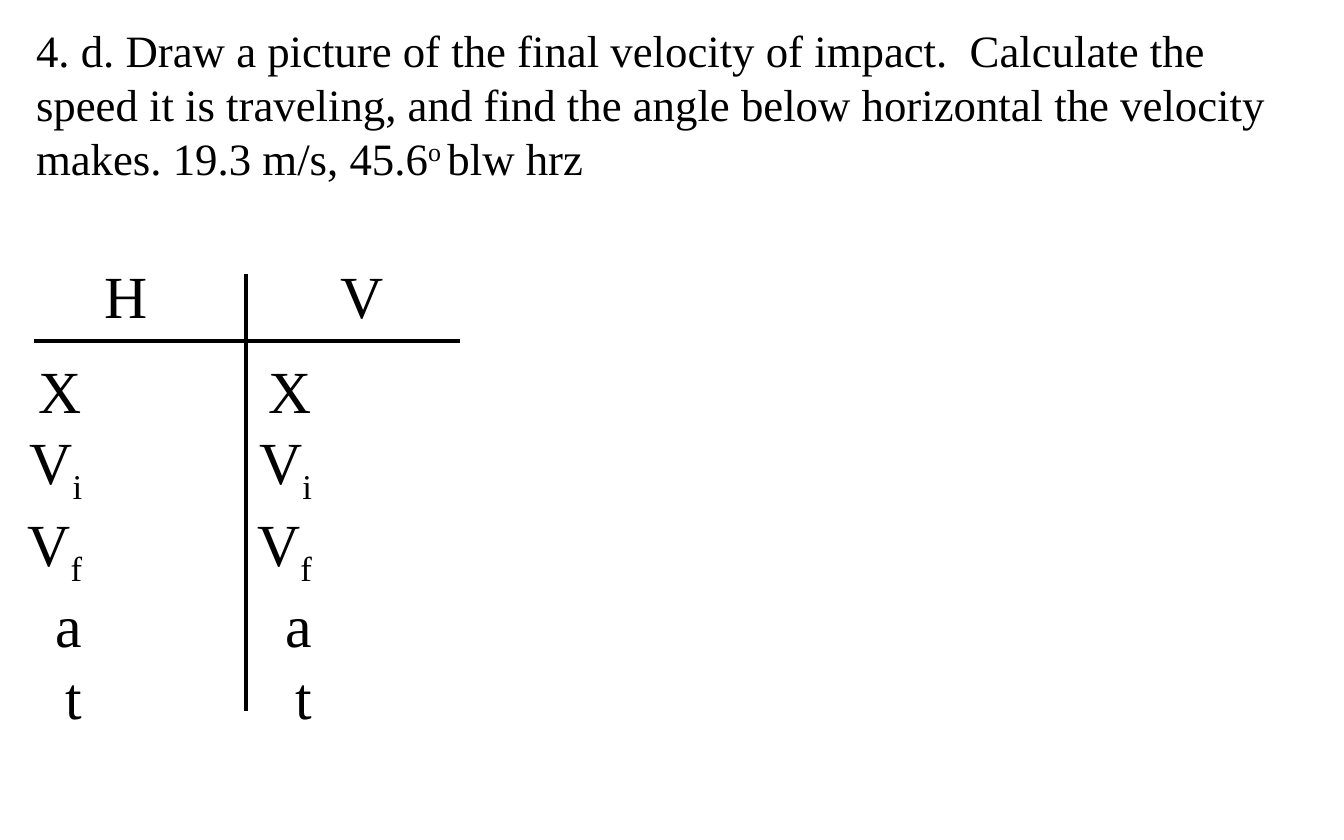
from lxml.etree import SubElement
from pptx import Presentation
from pptx.dml.color import RGBColor
from pptx.enum.shapes import MSO_CONNECTOR
from pptx.enum.text import MSO_AUTO_SIZE, PP_ALIGN
from pptx.oxml.ns import qn
from pptx.util import Inches, Pt

BLACK = RGBColor(0, 0, 0)
FONT = "Times New Roman"
SUPERSCRIPT, SUBSCRIPT = 30, -25

QUESTION = [[
    ("4. d. Draw a picture of the final velocity of impact.  Calculate the "
     "speed it is traveling, and find the angle below horizontal the "
     "velocity makes. 19.3 m/s, 45.6", 0),
    ("o ", SUPERSCRIPT),
    ("blw hrz", 0),
]]
QUANTITIES = [
    [("X", 0)],
    [("V", 0), ("i", SUBSCRIPT)],
    [("V", 0), ("f", SUBSCRIPT)],
    [("a", 0)],
    [("t", 0)],
]

CHART_LEFT, CHART_TOP = 0.25, 2.04
CHART_RIGHT, CHART_BOTTOM = 3.42, 5.29
DIVIDER_X, HEADER_Y = 1.83, 2.54
COLUMN_LEFTS = {"H": 0.08, "V": 1.79}
HEADING_LEFTS = {"H": 0.67, "V": 2.42}


def add_text(slide, box, paragraphs, size, align=PP_ALIGN.LEFT, wrap=False):
    """Write paragraphs, each a list of (text, baseline shift in percent)."""
    frame = slide.shapes.add_textbox(*map(Inches, box)).text_frame
    frame.word_wrap = wrap
    frame.auto_size = MSO_AUTO_SIZE.SHAPE_TO_FIT_TEXT
    for index, pieces in enumerate(paragraphs):
        paragraph = frame.add_paragraph() if index else frame.paragraphs[0]
        paragraph.alignment = align
        for text, baseline in pieces:
            run = paragraph.add_run()
            run.text = text
            run.font.name = FONT
            run.font.size = Pt(size)
            run.font.color.rgb = BLACK
            if baseline:
                run.font._element.set("baseline", str(baseline * 1000))


def add_rule(slide, start, end):
    rule = slide.shapes.add_connector(
        MSO_CONNECTOR.STRAIGHT, *map(Inches, start + end))
    rule.line.color.rgb = BLACK
    rule.line.width = Pt(2)
    SubElement(rule._element.spPr, qn("a:effectLst"))


def add_motion_chart(slide):
    """Draw the T-chart of horizontal and vertical quantities."""
    for direction, left in COLUMN_LEFTS.items():
        add_text(slide, (left, 2.58, 0.63, 2.79), QUANTITIES, 32,
                 PP_ALIGN.RIGHT)
        add_text(slide, (HEADING_LEFTS[direction], 1.88, 0.53, 0.64),
                 [[(direction, 0)]], 32, PP_ALIGN.RIGHT)
    add_rule(slide, (CHART_LEFT, HEADER_Y), (CHART_RIGHT, HEADER_Y))
    add_rule(slide, (DIVIDER_X, CHART_TOP), (DIVIDER_X, CHART_BOTTOM))


def main():
    deck = Presentation()
    deck.slide_width, deck.slide_height = Inches(10), Inches(6.25)
    slide = deck.slides.add_slide(deck.slide_layouts[6])
    add_text(slide, (0.17, 0.12, 9.67, 1.31), QUESTION, 24, wrap=True)
    add_motion_chart(slide)
    deck.save("out.pptx")


if __name__ == "__main__":
    main()
